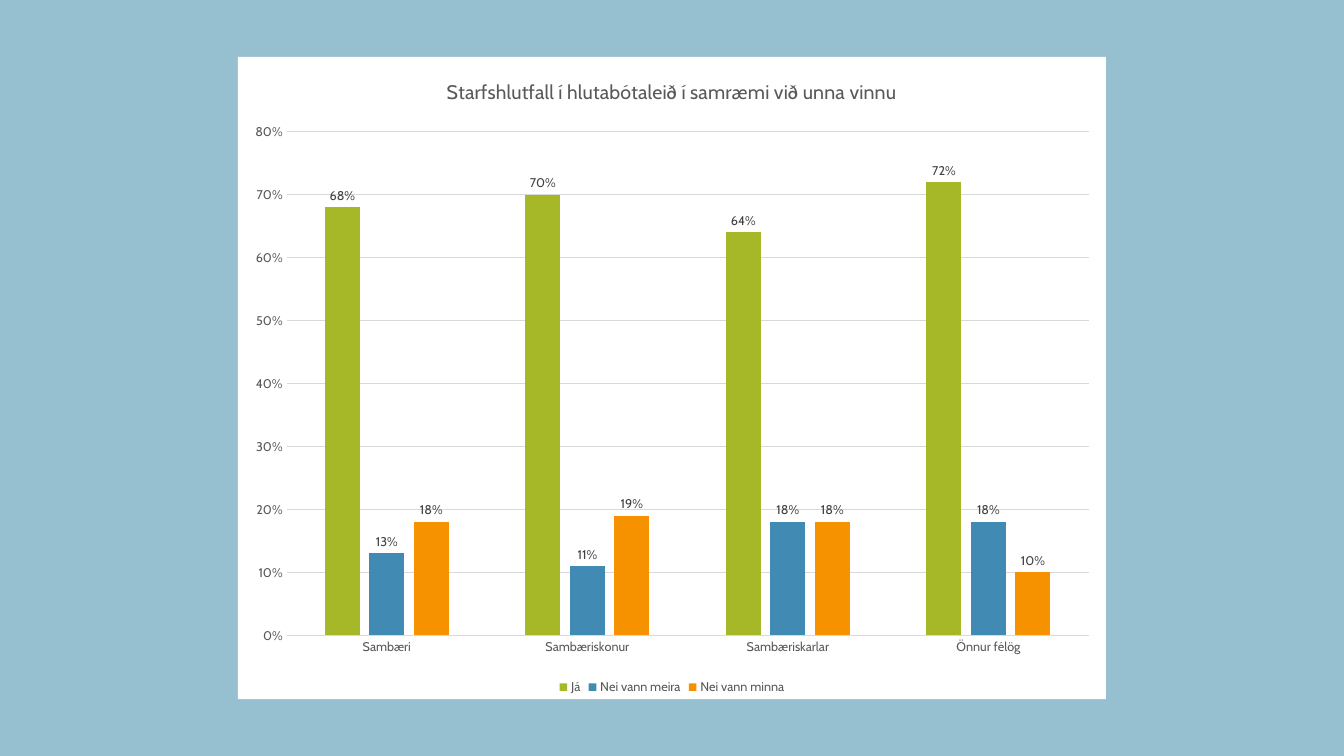
from pptx import Presentation, util as u
from pptx.chart.data import CategoryChartData
from pptx.dml.color import RGBColor
from pptx.enum import chart as charts
from pptx.oxml import parse_xml
from pptx.oxml.ns import nsdecls

WIDTH, HEIGHT = 13.33, 7.5
FONT = "Cabin"
COLORS = {
    "background": "96C0CF",
    "panel": "FFFFFF",
    "grid": "D9D9D9",
    "text": "595959",
    "label": "404040",
    "yes": "A6B727",
    "more": "418AB3",
    "less": "F69200",
}
TITLE = "Starfshlutfall í hlutabótaleið í samræmi við unna vinnu"
UNIONS = ["Sambæri", "Sambæriskonur", "Sambæriskarlar", "Önnur félög"]
ANSWERS = [
    ("Já", "yes", [0.68, 0.70, 0.64, 0.72]),
    ("Nei vann meira", "more", [0.13, 0.11, 0.18, 0.18]),
    ("Nei vann minna", "less", [0.18, 0.19, 0.18, 0.10]),
]


def rgb(name):
    """Look up a named colour."""
    return RGBColor.from_string(COLORS[name])


def style_font(font, size, color):
    """Set typeface, size and colour of a font."""
    font.name = FONT
    font.size = u.Pt(size)
    font.bold = False
    font.color.rgb = rgb(color)


def style_line(line):
    """Draw a thin grey line."""
    line.color.rgb = rgb("grid")
    line.width = u.Pt(0.75)


def fill_panel(chart):
    """Give the whole chart a plain fill without an outline."""
    panel = parse_xml(
        f'<c:spPr {nsdecls("c", "a")}><a:solidFill><a:srgbClr val="{COLORS["panel"]}"/>'
        "</a:solidFill><a:ln><a:noFill/></a:ln></c:spPr>"
    )
    chart.element.find("{*}chart").addnext(panel)


def style_axes(chart):
    """Format both axes and the gridlines."""
    for axis in (chart.category_axis, chart.value_axis):
        axis.major_tick_mark = axis.minor_tick_mark = charts.XL_TICK_MARK.NONE
        style_font(axis.tick_labels.font, 9, "text")
    style_line(chart.category_axis.format.line)
    values = chart.value_axis
    values.minimum_scale, values.maximum_scale, values.major_unit = 0, 0.8, 0.1
    values.tick_labels.number_format = "0%"
    values.tick_labels.number_format_is_linked = False
    values.format.line.fill.background()
    style_line(values.major_gridlines.format.line)


def style_columns(plot):
    """Colour the columns and label each with its share."""
    plot.gap_width, plot.overlap = 219, -27
    plot.vary_by_categories = False
    for series, (_, color, _) in zip(plot.series, ANSWERS):
        series.format.fill.solid()
        series.format.fill.fore_color.rgb = rgb(color)
        series.invert_if_negative = False
        labels = series.data_labels
        labels.show_value = True
        labels.number_format = "0%"
        labels.number_format_is_linked = False
        labels.position = charts.XL_LABEL_POSITION.OUTSIDE_END
        style_font(labels.font, 9, "label")


def add_answer_chart(slide, left, top, width, height):
    """Place the column chart in the given box, in inches."""
    data = CategoryChartData(number_format="0%")
    data.categories = UNIONS
    for name, _, shares in ANSWERS:
        data.add_series(name, shares)
    box = [u.Inches(length) for length in (left, top, width, height)]
    chart = slide.shapes.add_chart(
        charts.XL_CHART_TYPE.COLUMN_CLUSTERED, *box, data
    ).chart
    style_font(chart.font, 10, "text")
    fill_panel(chart)
    chart.has_title = True
    title = chart.chart_title.text_frame
    title.text = TITLE
    style_font(title.paragraphs[0].runs[0].font, 14, "text")
    chart.chart_title.include_in_layout = False
    chart.has_legend = True
    chart.legend.position = charts.XL_LEGEND_POSITION.BOTTOM
    chart.legend.include_in_layout = False
    style_font(chart.legend.font, 9, "text")
    style_axes(chart)
    style_columns(chart.plots[0])


def main():
    """Build the one-slide presentation."""
    presentation = Presentation()
    presentation.slide_width = u.Inches(WIDTH)
    presentation.slide_height = u.Inches(HEIGHT)
    slide = presentation.slides.add_slide(presentation.slide_layouts[6])
    slide.background.fill.solid()
    slide.background.fill.fore_color.rgb = rgb("background")
    width, height = 8.61, 6.37
    add_answer_chart(slide, (WIDTH - width) / 2, (HEIGHT - height) / 2, width, height)
    presentation.save("out.pptx")


if __name__ == "__main__":
    main()
